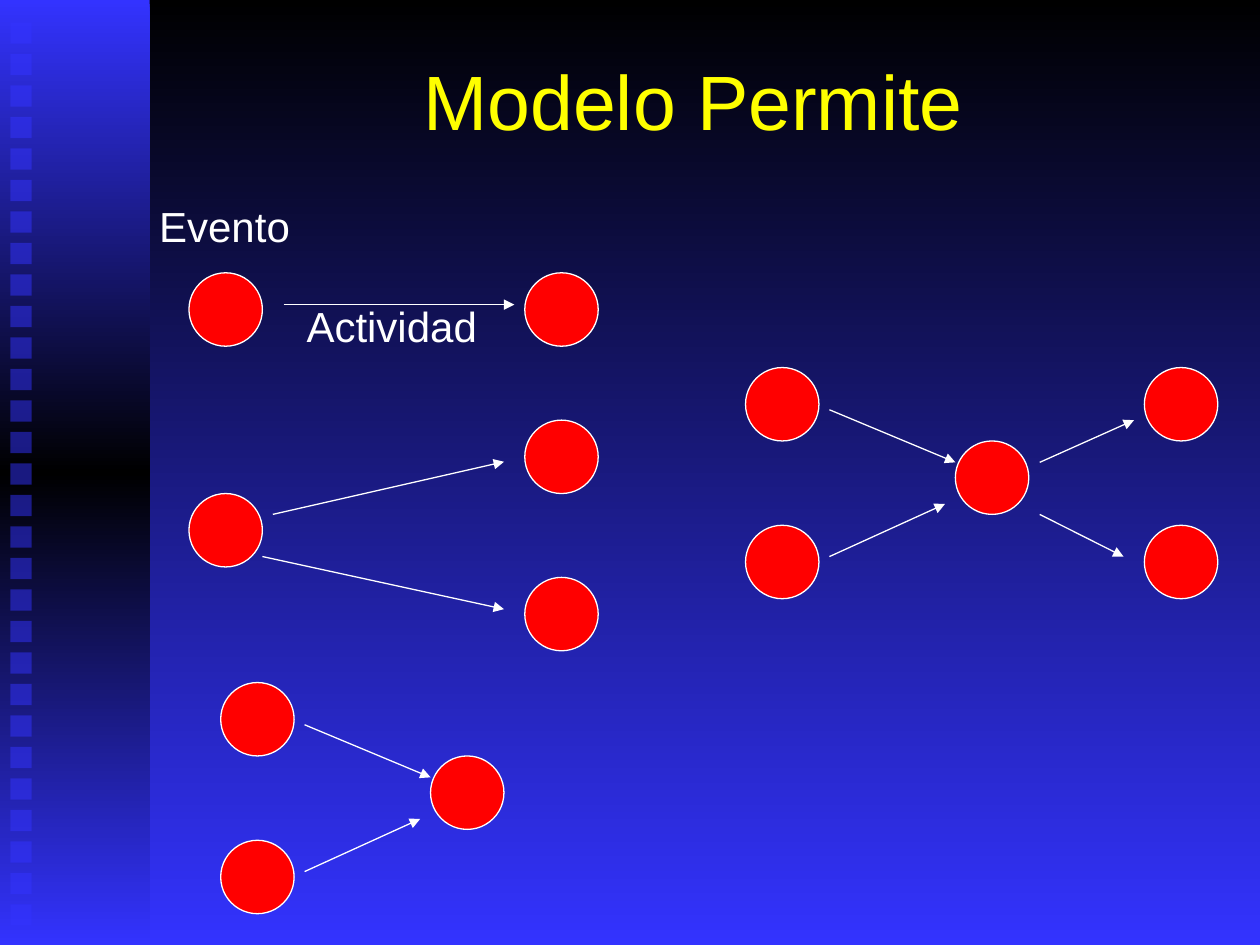
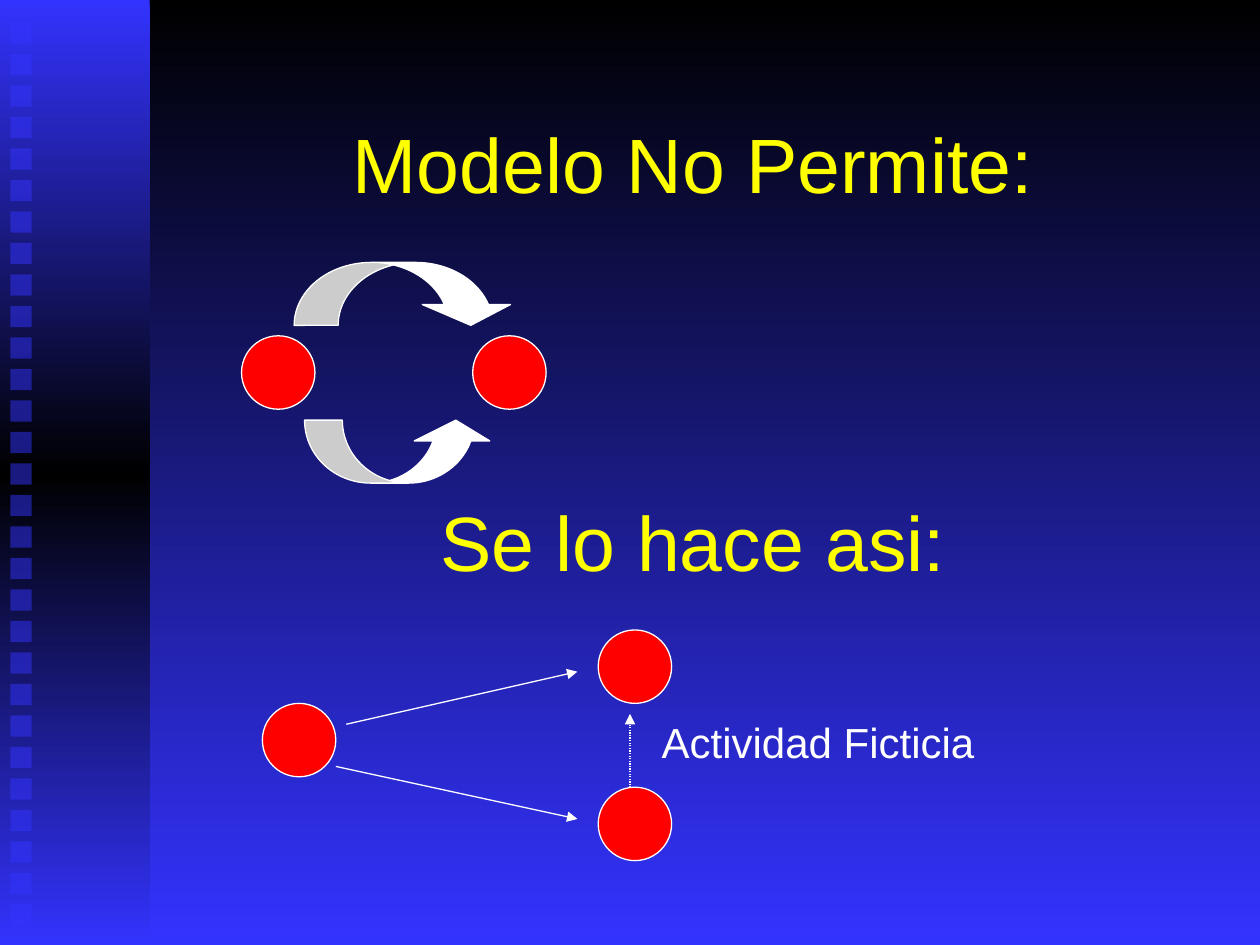
from lxml.etree import SubElement
from pptx import Presentation
from pptx.dml.color import RGBColor
from pptx.enum.dml import MSO_LINE_DASH_STYLE as Dash
from pptx.enum.shapes import MSO_CONNECTOR as Connector, MSO_SHAPE as Shape
from pptx.enum.text import MSO_ANCHOR as Anchor, MSO_AUTO_SIZE as AutoSize, PP_ALIGN as Align
from pptx.oxml.ns import qn
from pptx.util import Cm, Pt

COLOURS = {
    "night": "000000",
    "blue": "3333FF",
    "title": "FFFF00",
    "event": "FF0000",
    "white": "FFFFFF",
}
FONT = "Arial"
SLIDE_WIDTH, SLIDE_HEIGHT = 25.4, 19.05
EVENT_SIZE = 1.48
HEADING_LEFT, HEADING_WIDTH, HEADING_HEIGHT = 3.18, 21.59, 3.18


def colour(name):
    return RGBColor.from_string(COLOURS[name])


# Shared backdrop
def paint_gradient(fill, element, names):
    """Spread the named colours evenly from top to bottom."""
    fill.gradient()
    fill.gradient_angle = 270
    stops = next(element.iter(qn("a:gsLst")))
    for stop in list(stops):
        stops.remove(stop)
    for index, name in enumerate(names):
        position = round(100000 * index / (len(names) - 1))
        stop = SubElement(stops, qn("a:gs"), pos=str(position))
        SubElement(stop, qn("a:srgbClr"), val=COLOURS[name])


def add_band(shapes):
    """Group the left band with its column of translucent squares."""
    group = shapes.add_group_shape()
    band = group.shapes.add_shape(Shape.RECTANGLE, 0, 0, Cm(3.02), Cm(SLIDE_HEIGHT))
    paint_gradient(band.fill, band.element, ["blue", "night", "blue"])
    band.line.fill.background()
    band.shadow.inherit = False

    first_top, last_top, count = 0.45, 18.23, 29
    pitch = (last_top - first_top) / (count - 1)
    for index in range(count):
        square = group.shapes.add_shape(
            Shape.RECTANGLE, Cm(0.21), Cm(first_top + index * pitch), Cm(0.43), Cm(0.43))
        square.fill.solid()
        square.fill.fore_color.rgb = colour("blue")
        tint = next(square.element.iter(qn("a:srgbClr")))
        SubElement(tint, qn("a:alpha"), val="50000")
        square.line.fill.background()
        square.shadow.inherit = False
    return group


def dress_master(master, slide):
    """Set the background and move the band to the master."""
    paint_gradient(master.background.fill, master.element, ["night", "blue"])
    tree = master.element.cSld.spTree
    tree.insert(2, add_band(slide.shapes).element)
    for number, properties in enumerate(tree.iter(qn("p:cNvPr")), start=1):
        properties.set("id", str(number))


# Text
def add_run(paragraph, text, size, name):
    run = paragraph.add_run()
    run.text = text
    run.font.name = FONT
    run.font.size = Pt(size)
    run.font.color.rgb = colour(name)


def format_heading(shape, text):
    frame = shape.text_frame
    frame.word_wrap = True
    frame.auto_size = AutoSize.NONE
    frame.vertical_anchor = Anchor.MIDDLE
    paragraph = frame.paragraphs[0]
    paragraph.alignment = Align.CENTER
    add_run(paragraph, text, 44, "title")


def set_title(slide, text, top):
    title = slide.shapes.title
    title.left, title.top = Cm(HEADING_LEFT), Cm(top)
    title.width, title.height = Cm(HEADING_WIDTH), Cm(HEADING_HEIGHT)
    format_heading(title, text)


def add_heading(slide, text, top):
    box = slide.shapes.add_textbox(
        Cm(HEADING_LEFT), Cm(top), Cm(HEADING_WIDTH), Cm(HEADING_HEIGHT))
    format_heading(box, text)


def add_label(slide, text, left, top, width):
    box = slide.shapes.add_textbox(Cm(left), Cm(top), Cm(width), Cm(1.27))
    box.text_frame.word_wrap = False
    box.text_frame.auto_size = AutoSize.SHAPE_TO_FIT_TEXT
    add_run(box.text_frame.paragraphs[0], text, 24, "white")


# Diagram elements
def add_figure(slide, kind, left, top, width, height, name):
    shape = slide.shapes.add_shape(kind, Cm(left), Cm(top), Cm(width), Cm(height))
    shape.fill.solid()
    shape.fill.fore_color.rgb = colour(name)
    shape.line.color.rgb = colour("white")
    shape.line.width = Pt(0.75)
    shape.shadow.inherit = False
    return shape


def add_event(slide, left, top):
    add_figure(slide, Shape.OVAL, left, top, EVENT_SIZE, EVENT_SIZE, "event")


def add_curved_arrow(slide, kind, left, top, width, adjustments):
    arrow = add_figure(slide, kind, left, top, width, 1.27, "white")
    for index, value in enumerate(adjustments):
        arrow.adjustments[index] = value


def add_activity(slide, start, end, dash=None):
    arrow = slide.shapes.add_connector(
        Connector.STRAIGHT, *(Cm(value) for value in (*start, *end)))
    arrow.line.color.rgb = colour("white")
    arrow.line.width = Pt(0.75)
    if dash:
        arrow.line.dash_style = dash
    properties = arrow.element.spPr
    SubElement(properties.find(qn("a:ln")), qn("a:tailEnd"), type="triangle")
    SubElement(properties, qn("a:effectLst"))


def add_network(slide, left, top, events, activities):
    """Draw events and activities placed relative to one corner."""
    for x, y in events:
        add_event(slide, left + x, top + y)
    for start, end in activities:
        add_activity(slide, (left + start[0], top + start[1]),
                     (left + end[0], top + end[1]))


def add_fork(slide, left, top):
    add_network(slide, left, top,
                [(0, 0), (6.77, -1.48), (6.77, 1.69)],
                [((1.69, 0.42), (6.35, -0.64)), ((1.48, 1.27), (6.35, 2.33))])


def add_merge(slide, left, top):
    add_network(slide, left, top,
                [(0, 0), (0, 3.18), (4.23, 1.48)],
                [((1.69, 0.85), (4.23, 1.91)), ((1.69, 3.81), (4.02, 2.75))])


# Slides
def build_allowed(slide):
    set_title(slide, "Modelo Permite", 0.42)

    # Single activity between two events
    add_network(slide, 3.81, 5.5, [(0, 0), (6.77, 0)], [((1.91, 0.64), (6.56, 0.64))])
    add_label(slide, "Evento", 2.96, 3.92, 3.15)
    add_label(slide, "Actividad", 5.93, 5.93, 3.96)

    add_fork(slide, 3.81, 9.95)
    add_merge(slide, 4.45, 13.76)

    # Merge that splits again
    add_merge(slide, 15.03, 7.41)
    add_network(slide, 15.03, 7.41,
                [(8.04, 0), (8.04, 3.18)],
                [((5.93, 1.91), (7.83, 1.06)), ((5.93, 2.96), (7.62, 3.81))])


def build_forbidden(slide):
    set_title(slide, "Modelo No Permite:", 1.69)

    # Two activities between the same events
    add_network(slide, 4.87, 6.77, [(0, 0), (4.66, 0)], [])
    add_curved_arrow(slide, Shape.CURVED_UP_ARROW, 6.14, 8.47, 3.81, (0.6, 1.2, 0.33))
    add_curved_arrow(slide, Shape.CURVED_DOWN_ARROW, 5.93, 5.29, 4.45, (0.7, 1.4, 0.33))

    # Solution with a dummy activity
    add_heading(slide, "Se lo hace asi:", 9.31)
    add_fork(slide, 5.29, 14.18)
    add_activity(slide, (12.7, 15.88), (12.7, 14.39), Dash.ROUND_DOT)
    add_label(slide, "Actividad Ficticia", 13.09, 14.31, 6.83)


def main():
    presentation = Presentation()
    presentation.slide_width = Cm(SLIDE_WIDTH)
    presentation.slide_height = Cm(SLIDE_HEIGHT)
    title_only = presentation.slide_layouts[5]

    allowed = presentation.slides.add_slide(title_only)
    forbidden = presentation.slides.add_slide(title_only)
    dress_master(presentation.slide_master, allowed)
    build_allowed(allowed)
    build_forbidden(forbidden)
    presentation.save("out.pptx")


if __name__ == "__main__":
    main()
